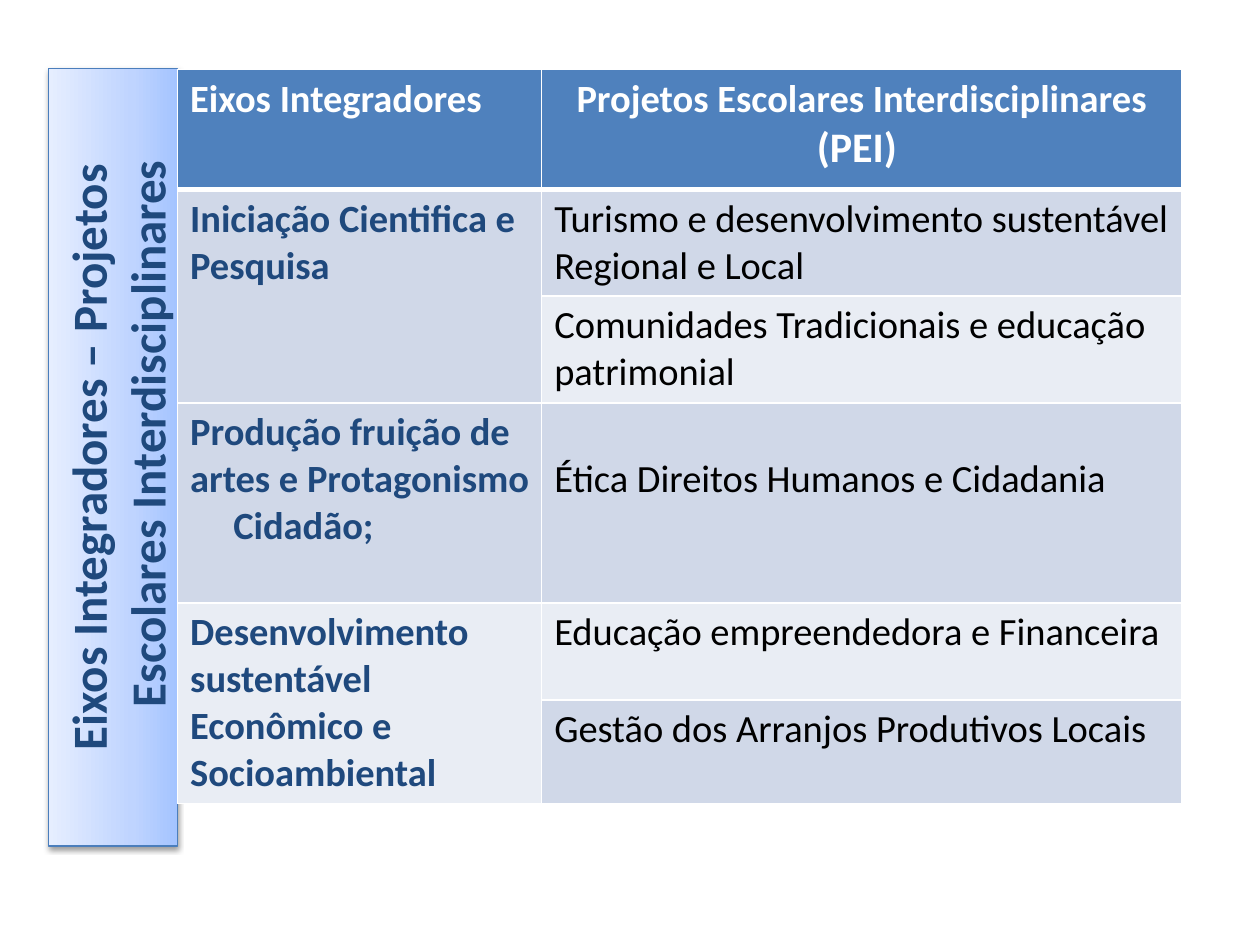
from lxml.etree import SubElement
from pptx import Presentation
from pptx.dml.color import RGBColor
from pptx.enum.shapes import MSO_SHAPE as Shape
from pptx.enum.text import MSO_ANCHOR as Anchor, PP_ALIGN as Align
from pptx.oxml.ns import qn
from pptx.util import Cm, Pt

COLORS = {
    "white": "FFFFFF", "black": "000000", "navy": "1F497D",
    "header": "4F81BD", "dark": "D0D8E8", "light": "E9EDF4",
    "outline": "4B7EBC", "deep": "A4C4FF", "middle": "BFD4FF", "pale": "E6EEFF",
}


def add_node(parent, tag, **attributes):
    values = {name: str(value) for name, value in attributes.items()}
    return SubElement(parent, qn(f"a:{tag}"), values)


def set_font(target, size, color, bold):
    font = target.font
    font.name, font.size, font.bold = "Calibri", Pt(size), bold
    font.color.rgb = RGBColor.from_string(COLORS[color])


deck = Presentation()
deck.slide_width, deck.slide_height = Cm(25.4), Cm(19.05)
page = deck.slides.add_slide(deck.slide_layouts[6])

# Vertical title band
width, height = Cm(15.67), Cm(2.59)
center_x, center_y = Cm(2.28), Cm(9.22)
band = page.shapes.add_shape(
    Shape.RECTANGLE, center_x - width // 2, center_y - height // 2, width, height)
band.rotation = 270
band.line.color.rgb = RGBColor.from_string(COLORS["outline"])
band.line.width = Pt(0.75)

# Band gradient
band.fill.gradient()
band.fill.gradient_angle = 90
stops = band._element.spPr.find(".//" + qn("a:gsLst"))
for stop in list(stops):
    stops.remove(stop)
for position, color in ((0, "deep"), (35, "middle"), (100, "pale")):
    stop = add_node(stops, "gs", pos=position * 1000)
    add_node(stop, "srgbClr", val=COLORS[color])

# Band shadow
band.shadow.inherit = False
effects = band._element.spPr.find(qn("a:effectLst"))
shadow = add_node(effects, "outerShdw", blurRad=Pt(3.1), dist=Pt(1.6),
                  dir=90 * 60000, rotWithShape=0)
shade = add_node(shadow, "srgbClr", val=COLORS["black"])
add_node(shade, "alpha", val=38000)

# Band text with a hanging indent
frame = band.text_frame
frame.word_wrap = True
frame.vertical_anchor = Anchor.TOP
frame.margin_top, frame.margin_bottom = Cm(0.18), 0
para = frame.paragraphs[0]
para.text = "Eixos Integradores – Projetos Escolares Interdisciplinares"
para.alignment = Align.CENTER
properties = para._p.get_or_add_pPr()
properties.set("marL", str(Cm(0.95)))
properties.set("indent", str(-Cm(0.95)))
set_font(para, 28, "navy", True)

# Table grid
column_widths = [7.34, 12.9]
row_heights = [2.42, 2.14, 2.16, 4.03, 1.96, 2.08]
table = page.shapes.add_table(
    len(row_heights), len(column_widths), Cm(3.58), Cm(1.4),
    Cm(sum(column_widths)), Cm(sum(row_heights))).table
for column, size in zip(table.columns, column_widths):
    column.width = Cm(size)
for row, size in zip(table.rows, row_heights):
    row.height = Cm(size)

# Each cell: paragraphs and fill; None is covered by the cell above
rows = [
    ((["Eixos Integradores"], "header"),
     (["Projetos Escolares Interdisciplinares "], "header")),
    ((["Iniciação Cientifica e Pesquisa"], "dark"),
     (["Turismo e desenvolvimento sustentável Regional e Local"], "dark")),
    (None, (["Comunidades Tradicionais e educação patrimonial"], "light")),
    ((["Produção fruição de artes e Protagonismo", "Cidadão;"], "dark"),
     (["Ética Direitos Humanos e Cidadania"], "dark")),
    ((["Desenvolvimento sustentável Econômico e Socioambiental"], "light"),
     (["Educação empreendedora e Financeira"], "light")),
    (None, (["Gestão dos Arranjos Produtivos Locais"], "dark")),
]
for row_index, row in enumerate(rows):
    for column_index, content in enumerate(row):
        cell = table.cell(row_index, column_index)
        cell_properties = cell._tc.get_or_add_tcPr()
        for side in "LRTB":
            thick = (row_index, side) in ((0, "B"), (1, "T"))
            border = add_node(cell_properties, f"ln{side}", w=Pt(3 if thick else 1))
            add_node(add_node(border, "solidFill"), "srgbClr", val=COLORS["white"])
        if content is None:
            cell.merge(table.cell(row_index - 1, column_index))
            continue
        lines, fill = content
        cell.fill.solid()
        cell.fill.fore_color.rgb = RGBColor.from_string(COLORS[fill])
        text_color = ("white" if row_index == 0
                      else "black" if column_index else "navy")
        cell.text = "\n".join(lines)
        for para in cell.text_frame.paragraphs:
            set_font(para, 22, text_color, text_color != "black")

# Cells with their own layout
para = table.cell(0, 1).text_frame.paragraphs[0]
para.alignment = Align.CENTER
span = para.add_run()
span.text = "(PEI) "
span.font.size = Pt(24)
last_line = table.cell(3, 0).text_frame.paragraphs[1]
last_line._p.get_or_add_pPr().set("marL", str(Cm(0.87)))
table.cell(3, 1).margin_top = Cm(1.07)

deck.save("out.pptx")
